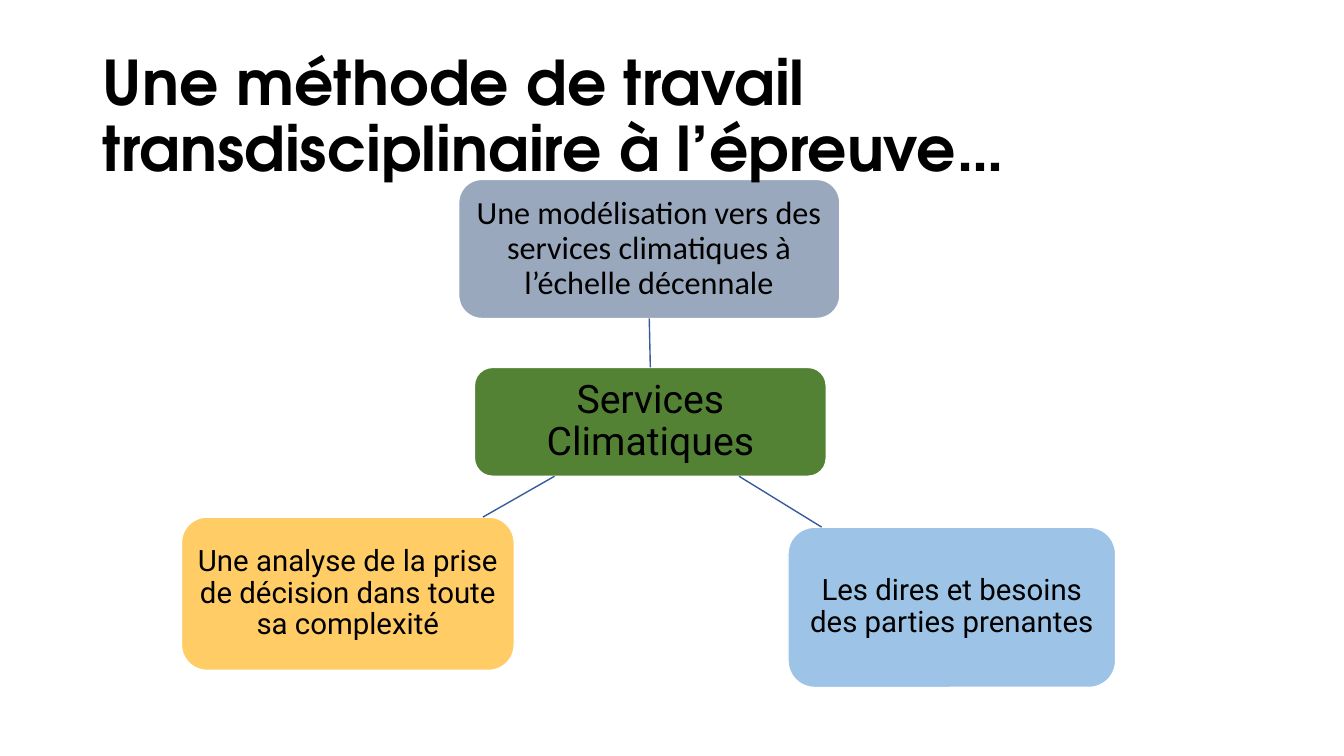
from lxml.etree import SubElement
from pptx import Presentation
from pptx.dml.color import RGBColor as RGB
from pptx.enum.shapes import MSO_CONNECTOR as Line, MSO_SHAPE as Shape
from pptx.enum.text import MSO_ANCHOR as Anchor, MSO_AUTO_SIZE as Fit, PP_ALIGN as Align
from pptx.oxml.ns import qn
from pptx.util import Inches, Pt

BLACK = RGB(0, 0, 0)
WHITE = RGB(255, 255, 255)
BLUE = RGB(0x36, 0x5B, 0x9D)
GREEN = RGB(0x54, 0x82, 0x35)
GREY = RGB(0x99, 0xA8, 0xBD)
SKY = RGB(0x9D, 0xC3, 0xE6)
GOLD = RGB(0xFF, 0xCC, 0x66)

TITLE = "Une méthode de travail transdisciplinaire à l’épreuve…"
HEAD = (6.9, 6, 86.27, 19.33)
BOXES = {
    "hub": ("Services Climatiques", (35.3, 48.6, 26.18, 14.4), GREEN, "Roboto", 28),
    "model": ("Une modélisation vers des services climatiques à l’échelle décennale",
              (34.13, 23.73, 28.36, 18.4), GREY, "Calibri", 23),
    "needs": ("Les dires et besoins des parties prenantes",
              (58.63, 69.73, 24.38, 21.2), SKY, "Roboto", 21),
    "choice": ("Une analyse de la prise de décision dans toute sa complexité",
               (13.5, 68.4, 24.76, 20.27), GOLD, "Roboto", 21),
}
SLANTS = [("needs", 54.99, 61.14), ("choice", 41.26, 35.93)]

deck = Presentation()
deck.slide_width, deck.slide_height = Inches(13.33), Inches(7.5)
slide = deck.slides.add_slide(deck.slide_layouts[5])
shapes = slide.shapes


def wide(share):
    return int(deck.slide_width * share / 100)


def high(share):
    return int(deck.slide_height * share / 100)


def place(area):
    x, y, w, h = area
    return wide(x), high(y), wide(w), high(h)


def write(frame, text, font, size, align):
    frame.word_wrap = True
    frame.auto_size = Fit.NONE
    frame.vertical_anchor = Anchor.MIDDLE
    frame.text = text
    para = frame.paragraphs[0]
    para.alignment = align
    para.line_spacing = 0.9
    para.font.name = font
    para.font.size = Pt(size)
    para.font.color.rgb = BLACK
    return para


def add_box(text, area, fill, font, size):
    box = shapes.add_shape(Shape.ROUNDED_RECTANGLE, *place(area))
    box.shadow.inherit = False
    box.fill.solid()
    box.fill.fore_color.rgb = fill
    box.line.color.rgb = WHITE
    box.line.width = Pt(1)
    frame = box.text_frame
    frame.margin_left = frame.margin_right = Inches(0.06)
    frame.margin_top = frame.margin_bottom = Inches(0.06)
    write(frame, text, font, size, Align.CENTER)
    return box


def add_link(*ends):
    link = shapes.add_connector(Line.STRAIGHT, *ends)
    link.line.color.rgb = BLUE
    link.line.width = Pt(1)
    SubElement(link._element.spPr, qn("a:effectLst"))
    return link


boxes = {name: add_box(*data) for name, data in BOXES.items()}
hub = boxes["hub"]

stem = add_link(0, 0, 0, 0)
stem.begin_connect(hub, 0)
stem.end_connect(boxes["model"], 2)
for name, start, end in SLANTS:
    add_link(wide(start), hub.top + hub.height, wide(end), boxes[name].top)

title = shapes.title
title.left, title.top, title.width, title.height = place(HEAD)
write(title.text_frame, TITLE, "TeX Gyre Adventor", 44, Align.LEFT).font.bold = True
shapes._spTree.append(title._element)

deck.save("out.pptx")
